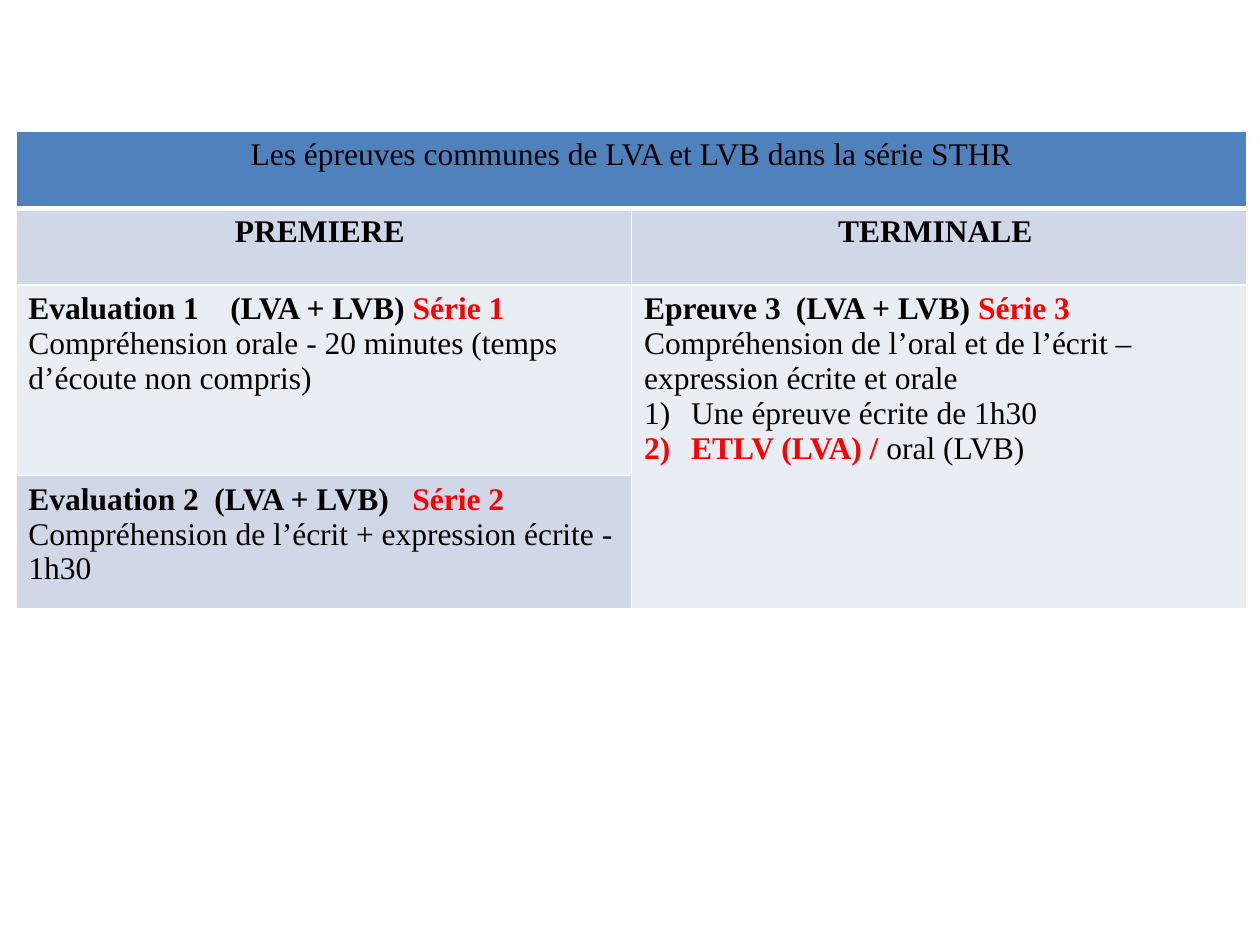
import lxml.etree
import pptx
import pptx.dml.color
import pptx.enum.text
import pptx.oxml.ns
import pptx.util

Cm = pptx.util.Cm
Pt = pptx.util.Pt
RGBColor = pptx.dml.color.RGBColor
qn = pptx.oxml.ns.qn

BLACK = RGBColor(0x00, 0x00, 0x00)
RED = RGBColor(0xFF, 0x00, 0x00)
WHITE = RGBColor(0xFF, 0xFF, 0xFF)
BLUE = RGBColor(0x4F, 0x81, 0xBD)
BAND = RGBColor(0xD0, 0xD8, 0xE8)
PALE = RGBColor(0xE9, 0xED, 0xF4)


class ExamPage:
    """Holds the text style and the slide, and adds the parts of the exam table."""

    font = "Times New Roman"
    size = Pt(18)

    def __init__(self, page):
        self.page = page

    def table(self, left, top, widths, heights):
        frame = self.page.shapes.add_table(
            len(heights), len(widths), left, top, sum(widths), sum(heights))
        table = frame.table
        table.first_row = table.horz_banding = False
        for column, width in zip(table.columns, widths):
            column.width = width
        for row, height in zip(table.rows, heights):
            row.height = height
        return table

    def cell(self, cell, fill, bottom=1):
        properties = cell._tc.get_or_add_tcPr()
        for side, weight in (("lnL", 1), ("lnR", 1), ("lnT", 1), ("lnB", bottom)):
            line = lxml.etree.SubElement(properties, qn(f"a:{side}"), w=str(Pt(weight)))
            solid = lxml.etree.SubElement(line, qn("a:solidFill"))
            lxml.etree.SubElement(solid, qn("a:srgbClr"), val=str(WHITE))
        cell.fill.solid()
        cell.fill.fore_color.rgb = fill

    def paragraph(self, cell, spans, align="LEFT", tabs=(), numbered=False):
        frame = cell.text_frame
        para = frame.paragraphs[0]
        if para.runs:
            para = frame.add_paragraph()
        para.alignment = getattr(pptx.enum.text.PP_ALIGN, align)
        properties = para._p.get_or_add_pPr()
        if numbered:
            properties.set("marL", str(Cm(0.95)))
            properties.set("indent", str(-Cm(0.95)))
            lxml.etree.SubElement(properties, qn("a:buFont"), typeface="+mj-lt")
            lxml.etree.SubElement(properties, qn("a:buAutoNum"), type="arabicParenR")
        if tabs:
            stops = lxml.etree.SubElement(properties, qn("a:tabLst"))
            for stop in tabs:
                lxml.etree.SubElement(stops, qn("a:tab"), pos=str(Cm(stop)), algn="l")
        para.font.name = self.font
        para.font.size = self.size
        for text, bold, color in spans:
            span = para.add_run()
            span.text = text
            span.font.bold = bold
            span.font.color.rgb = color

    def exam(self, cell, heading, series, tabs, summary):
        self.paragraph(cell, [(heading, True, BLACK), (series, True, RED)], tabs=tabs)
        self.paragraph(cell, [(summary, False, BLACK)])


def main():
    deck = pptx.Presentation()
    deck.slide_width, deck.slide_height = Cm(25.4), Cm(19.05)
    page = ExamPage(deck.slides.add_slide(deck.slide_layouts[6]))

    table = page.table(Cm(0.32), Cm(2.65), [Cm(12.41)] * 2,
                       [Cm(1.55), Cm(1.55), Cm(3.84), Cm(2.69)])
    table.cell(0, 0).merge(table.cell(0, 1))
    table.cell(2, 1).merge(table.cell(3, 1))
    for index, fills in enumerate([(BLUE, BLUE), (BAND, BAND), (PALE, PALE), (BAND, PALE)]):
        for column, fill in enumerate(fills):
            page.cell(table.cell(index, column), fill, bottom=1 if index else 3)

    title = "Les épreuves communes de LVA et LVB dans la série STHR"
    page.paragraph(table.cell(0, 0), [(title, False, BLACK)], "CENTER")
    for column, level in enumerate(("PREMIERE ", "TERMINALE ")):
        page.paragraph(table.cell(1, column), [(level, True, BLACK)], "CENTER")

    page.exam(table.cell(2, 0), "Evaluation 1\t(LVA + LVB) ", "Série 1", [4.07],
              "Compréhension orale - 20 minutes (temps d’écoute non compris)")
    page.exam(table.cell(3, 0), "Evaluation 2\t(LVA + LVB)\t", "Série 2", [3.75, 7.74],
              "Compréhension de l’écrit + expression écrite - 1h30")
    final = table.cell(2, 1)
    page.exam(final, "Epreuve 3\t(LVA + LVB) ", "Série 3", [3.06],
              "Compréhension de l’oral et de l’écrit – expression écrite et orale")
    page.paragraph(final, [("Une épreuve écrite de 1h30", False, BLACK)], numbered=True)
    page.paragraph(final, [("ETLV (LVA) / ", True, RED), ("oral (LVB)", False, BLACK)],
                   numbered=True)

    deck.save("out.pptx")


if __name__ == "__main__":
    main()
